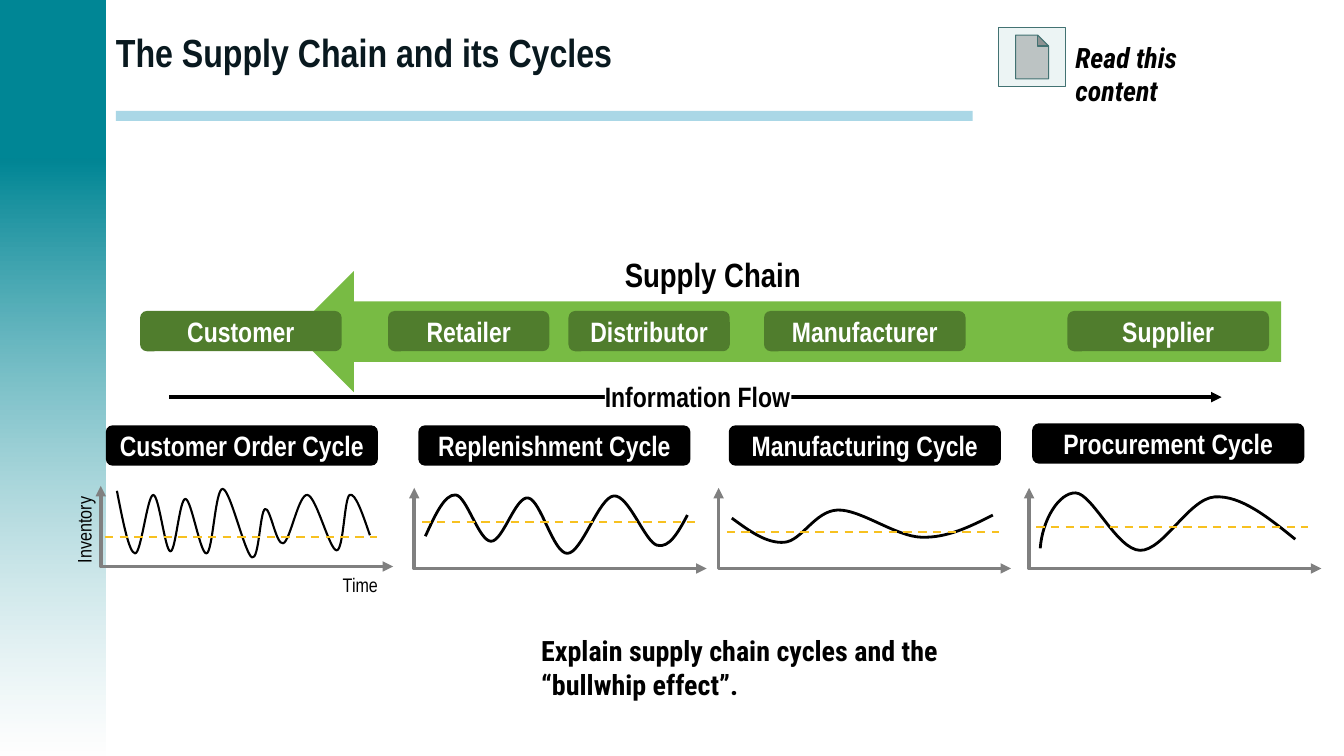
from dataclasses import dataclass

from lxml.etree import SubElement
from pptx import Presentation
from pptx.dml.color import RGBColor
from pptx.enum.dml import MSO_LINE
from pptx.enum.shapes import MSO_CONNECTOR, MSO_SHAPE
from pptx.enum.text import MSO_ANCHOR, MSO_AUTO_SIZE, PP_ALIGN
from pptx.oxml.ns import qn
from pptx.shapes.autoshape import Shape
from pptx.shapes.connector import Connector
from pptx.slide import Slide
from pptx.text.text import TextFrame
from pptx.util import Inches, Pt

Point = tuple[float, float]

TEAL = RGBColor(0x00, 0x86, 0x95)
PALE_BLUE = RGBColor(0xAA, 0xD7, 0xE6)
NAVY = RGBColor(0x09, 0x19, 0x1F)
PALE_GREY = RGBColor(0xEC, 0xF4, 0xF4)
SLATE = RGBColor(0x42, 0x72, 0x72)
GREEN = RGBColor(0x78, 0xBB, 0x44)
DARK_GREEN = RGBColor(0x50, 0x7D, 0x2D)
GREY = RGBColor(0x80, 0x80, 0x80)
YELLOW = RGBColor(0xF7, 0xC1, 0x20)
BLACK = RGBColor(0, 0, 0)
WHITE = RGBColor(0xFF, 0xFF, 0xFF)
NARROW, CONDENSED = "Arial Narrow", "Roboto Condensed"

CELLS_PER_INCH = 10
COLUMNS, ROWS = 133.33, 75
LABEL_ROWS, STAGE_ROW = 4, 30.85
CYCLE_COLUMNS, AXIS_COLUMNS, AXIS_ROWS = 27, 29, 8


@dataclass(frozen=True)
class Box:
    column: float
    row: float
    columns: float
    rows: float


@dataclass(frozen=True)
class Cycle:
    name: str
    label: Point
    axis: Point
    mean: Point
    wave_width: float
    turns: list[Point]
    first_handle: Point | None = None


@dataclass(frozen=True)
class Caption:
    text: str
    box: Box
    size: float
    font: str = NARROW
    bold: bool = True
    italic: bool = False
    wrap: bool = False
    rotation: float = 0


STAGES = {
    "Customer": Box(13.9, STAGE_ROW, 20, LABEL_ROWS),
    "Retailer": Box(38.5, STAGE_ROW, 16, LABEL_ROWS),
    "Distributor": Box(56.4, STAGE_ROW, 16, LABEL_ROWS),
    "Manufacturer": Box(75.8, STAGE_ROW, 20, LABEL_ROWS),
    "Supplier": Box(105.9, STAGE_ROW, 20, LABEL_ROWS),
}
CYCLES = [
    Cycle("Customer Order Cycle", (10.5, 42.2), (10, 48.2), (10.4, 53.3), 1.5,
          [(11.6, 48.7), (13.4, 54.9), (15.2, 49.1), (16.9, 54.7), (18.4, 49.5), (20.5, 54.9), (22.1, 48.5),
           (25, 55.3), (26.3, 50.5), (28.1, 53.9), (30.5, 49.1), (33.4, 54.6), (34.7, 49.1), (36.7, 53.1)]),
    Cycle("Replenishment Cycle", (41.5, 42.2), (41.1, 48.4), (41.9, 51.8), 2,
          [(42.2, 53.2), (45.2, 49.1), (48.7, 53.7), (52.4, 49.4), (56.3, 54.9), (60.9, 49.2),
           (65.2, 54.1), (68.2, 51.1)]),
    Cycle("Manufacturing Cycle", (72.3, 42.2), (71.3, 48.4), (72.1, 52.8), 2,
          [(72.6, 51.4), (77.8, 53.8), (83.1, 50.6), (91.4, 53.3), (98.5, 51.1)]),
    Cycle("Procurement Cycle", (102.4, 42), (102.1, 48.4), (102.8, 52.3), 2,
          [(103.2, 54.4), (106.7, 48.9), (113.1, 54.6), (120.5, 49.3), (128.5, 53.5)], (103.4, 51.6)),
]
CAPTIONS = [
    Caption("Read this content", Box(105.7, 3.5, 18.6, 4.4), 20, CONDENSED, italic=True, wrap=True),
    Caption("Time", Box(33, 56.3, 5.6, 3.4), 14, bold=False),
    Caption("Inventory", Box(4, 50.8, 8.7, 3.4), 14, bold=False, rotation=270),
    Caption("Supply Chain", Box(61, 24.7, 19.7, 5), 24),
    Caption("Explain supply chain cycles and the “bullwhip effect”.", Box(52.7, 62.4, 52.2, 4.4),
            20, CONDENSED, wrap=True),
]


def cell(count: float) -> int:
    return Inches(count / CELLS_PER_INCH)


def bounds(box: Box) -> tuple[int, int, int, int]:
    return cell(box.column), cell(box.row), cell(box.columns), cell(box.rows)


def write(frame: TextFrame, text: str, size: float, color: RGBColor, font: str = NARROW,
          bold: bool = True, italic: bool = False, align: PP_ALIGN = PP_ALIGN.LEFT) -> None:
    frame.text = text
    paragraph = frame.paragraphs[0]
    paragraph.alignment = align
    style = paragraph.runs[0].font
    style.name, style.size, style.bold, style.italic = font, Pt(size), bold, italic
    style.color.rgb = color


def add_block(slide: Slide, kind: MSO_SHAPE, box: Box, fill: RGBColor) -> Shape:
    shape = slide.shapes.add_shape(kind, *bounds(box))
    shape.shadow.inherit = False
    shape.fill.solid()
    shape.fill.fore_color.rgb = fill
    shape.line.fill.background()
    return shape


def add_label(slide: Slide, text: str, box: Box, fill: RGBColor) -> None:
    shape = add_block(slide, MSO_SHAPE.ROUNDED_RECTANGLE, box, fill)
    shape.text_frame.vertical_anchor = MSO_ANCHOR.MIDDLE
    write(shape.text_frame, text, 20, WHITE, align=PP_ALIGN.CENTER)


def add_caption(slide: Slide, caption: Caption) -> None:
    shape = slide.shapes.add_textbox(*bounds(caption.box))
    shape.rotation = caption.rotation
    shape.text_frame.word_wrap = caption.wrap
    shape.text_frame.auto_size = MSO_AUTO_SIZE.SHAPE_TO_FIT_TEXT
    write(shape.text_frame, caption.text, caption.size, BLACK, caption.font, caption.bold, caption.italic)


def set_line(shape: Shape | Connector, color: RGBColor, width: float) -> None:
    shape.line.color.rgb = color
    shape.line.width = Pt(width)


def add_arrowheads(shape: Shape | Connector, *ends: str) -> None:
    for end in ends:
        SubElement(shape.element.spPr.find(qn("a:ln")), qn(f"a:{end}")).set("type", "triangle")


def add_straight(slide: Slide, start: Point, columns: float, color: RGBColor, width: float) -> Connector:
    left, top = map(cell, start)
    connector = slide.shapes.add_connector(MSO_CONNECTOR.STRAIGHT, left, top, left + cell(columns), top)
    set_line(connector, color, width)
    SubElement(connector.element.spPr, qn("a:effectLst"))
    return connector


def add_outline(slide: Slide, points: list[Point], color: RGBColor, width: float) -> Shape:
    corners = [(cell(column), cell(row)) for column, row in points]
    builder = slide.shapes.build_freeform(*corners[0])
    builder.add_line_segments(corners[1:], close=False)
    shape = builder.convert_to_shape()
    shape.shadow.inherit = False
    shape.fill.background()
    set_line(shape, color, width)
    return shape


def middle(first: Point, second: Point) -> Point:
    return (first[0] + second[0]) / 2, (first[1] + second[1]) / 2


def add_wave(slide: Slide, cycle: Cycle) -> None:
    turns = cycle.turns
    shape = add_outline(slide, turns, BLACK, cycle.wave_width)
    slopes = [((after[0] - before[0]) / 6, (after[1] - before[1]) / 6) for before, after in zip(turns, turns[2:])]
    arrivals = [(x - dx, y - dy) for (x, y), (dx, dy) in zip(turns[1:], slopes)]
    departures = [(x + dx, y + dy) for (x, y), (dx, dy) in zip(turns[1:], slopes)]
    departures.insert(0, cycle.first_handle or middle(turns[0], arrivals[0]))
    arrivals.append(middle(departures[-1], turns[-1]))
    segments = list(shape.element.spPr.iter(qn("a:lnTo")))
    for segment, *handles in zip(segments, departures, arrivals, turns[1:]):
        segment.tag = qn("a:cubicBezTo")
        segment.remove(segment[0])
        for column, row in handles:
            point = SubElement(segment, qn("a:pt"))
            point.set("x", str(cell(column) - shape.left))
            point.set("y", str(cell(row) - shape.top))


def add_cycle(slide: Slide, cycle: Cycle) -> None:
    add_label(slide, cycle.name, Box(*cycle.label, CYCLE_COLUMNS, LABEL_ROWS), BLACK)
    left, top = cycle.axis
    bottom = top + AXIS_ROWS
    axes = add_outline(slide, [(left, top), (left, bottom), (left + AXIS_COLUMNS, bottom)], GREY, 2.5)
    add_arrowheads(axes, "headEnd", "tailEnd")
    add_wave(slide, cycle)
    add_straight(slide, cycle.mean, CYCLE_COLUMNS, YELLOW, 1.5).line.dash_style = MSO_LINE.DASH


def add_frame(slide: Slide) -> None:
    add_block(slide, MSO_SHAPE.RECTANGLE, Box(-0.2, -0.1, 10.7, 15.8), TEAL)
    fade = add_block(slide, MSO_SHAPE.RECTANGLE, Box(-0.2, 15.7, 10.7, 59.3), TEAL)
    fade.fill.gradient()
    fade.fill.gradient_angle = 270
    for stop, color in zip(fade.fill.gradient_stops, (TEAL, WHITE)):
        stop.color.rgb = color
    SubElement(list(fade.element.spPr.iter(qn("a:srgbClr")))[-1], qn("a:alpha")).set("val", "51000")
    add_block(slide, MSO_SHAPE.RECTANGLE, Box(11.5, 11, 85, 1), PALE_BLUE)
    title = slide.shapes.title
    title.left, title.top, title.width, title.height = bounds(Box(10.5, 0.1, 119.8, 10))
    title.text_frame.vertical_anchor = MSO_ANCHOR.MIDDLE
    write(title.text_frame, "The Supply Chain and its Cycles", 28, NAVY)
    button = add_block(slide, MSO_SHAPE.ACTION_BUTTON_DOCUMENT, Box(99.1, 2.75, 6.6, 5.8), PALE_GREY)
    set_line(button, SLATE, 0.75)


def add_information_flow(slide: Slide) -> None:
    add_arrowheads(add_straight(slide, (16.8, 39.4), 104.4, BLACK, 2.5), "tailEnd")
    frame = add_block(slide, MSO_SHAPE.RECTANGLE, Box(60, 37.2, 18.5, 4.4), WHITE).text_frame
    frame.margin_left = frame.margin_right = 0
    frame.word_wrap = False
    frame.auto_size = MSO_AUTO_SIZE.SHAPE_TO_FIT_TEXT
    frame.vertical_anchor = MSO_ANCHOR.TOP
    write(frame, "Information Flow", 20, BLACK)


presentation = Presentation()
presentation.slide_width, presentation.slide_height = cell(COLUMNS), cell(ROWS)
slide = presentation.slides.add_slide(presentation.slide_layouts[5])
add_frame(slide)
add_block(slide, MSO_SHAPE.UP_ARROW, Box(72.1, -16.1, 12, 98), GREEN).rotation = 270
for stage, box in STAGES.items():
    add_label(slide, stage, box, DARK_GREEN)
for cycle in CYCLES:
    add_cycle(slide, cycle)
add_information_flow(slide)
for caption in CAPTIONS:
    add_caption(slide, caption)
presentation.save("out.pptx")
